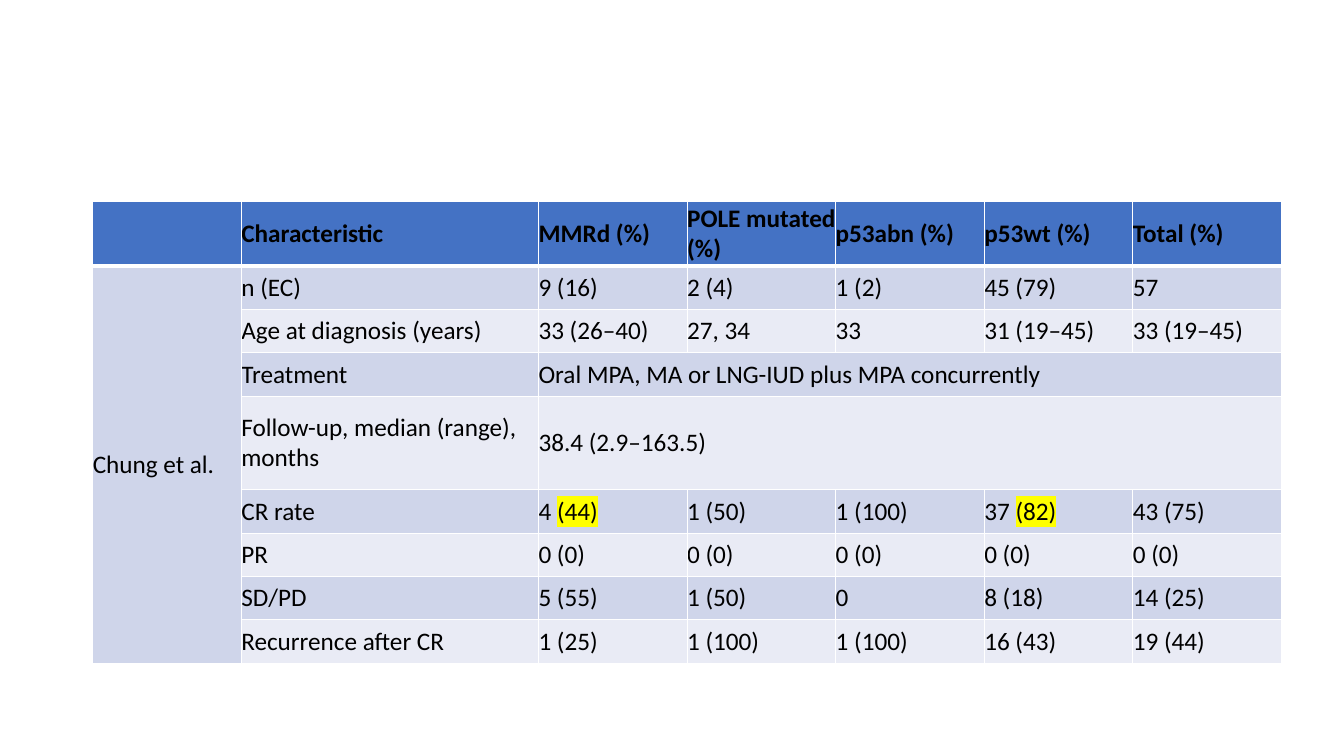
from dataclasses import dataclass

import pptx
import pptx.dml.color
import pptx.enum.text
import pptx.oxml
import pptx.oxml.ns
import pptx.util
from lxml import etree

SLIDE_W, SLIDE_H = 13.33, 7.5
LEFT, TOP = 0.92, 2
UNIT = 1.474
COLUMN_UNITS = [1, 2, 1, 1, 1, 1, 1]
ROW_H, HEADER_H, FOLLOW_UP_H = 0.43, 0.64, 0.93
COLORS = {
    "header": "4472C4",
    "band_dark": "CFD5EA",
    "band_light": "E9EBF5",
    "border": "FFFFFF",
    "text": "000000",
    "highlight": "FFFF00",
}
TEXT_FORMAT = {"name": "Calibri", "size": pptx.util.Pt(18)}
CELL_FORMAT = {
    "margin_left": 0,
    "margin_right": 0,
    "margin_top": 0,
    "margin_bottom": 0,
    "vertical_anchor": pptx.enum.text.MSO_ANCHOR.MIDDLE,
}


@dataclass
class Value:
    text: str
    marked: str = ""


@dataclass
class Row:
    label: str
    values: list[str | Value]
    height: float = ROW_H


HEADER = Row(
    "Characteristic",
    ["MMRd (%)", "POLE mutated (%)", "p53abn (%)", "p53wt (%)", "Total (%)"],
    HEADER_H,
)
STUDY = "Chung et al."
ROWS = [
    Row("n (EC)", ["9 (16)", "2 (4)", "1 (2)", "45 (79)", "57"]),
    Row("Age at diagnosis (years)",
        ["33 (26–40)", "27, 34", "33", "31 (19–45)", "33 (19–45)"]),
    Row("Treatment", ["Oral MPA, MA or LNG-IUD plus MPA concurrently"]),
    Row("Follow-up, median (range), months", ["38.4 (2.9–163.5)"], FOLLOW_UP_H),
    Row("CR rate",
        [Value("4 ", "(44)"), "1 (50)", "1 (100)", Value("37 ", "(82)"), "43 (75)"]),
    Row("PR", ["0 (0)"] * 5),
    Row("SD/PD", ["5 (55)", "1 (50)", "0", "8 (18)", "14 (25)"]),
    Row("Recurrence after CR",
        ["1 (25)", "1 (100)", "1 (100)", "16 (43)", "19 (44)"]),
]


def rgb(name: str) -> pptx.dml.color.RGBColor:
    return pptx.dml.color.RGBColor.from_string(COLORS[name])


def set_format(obj: object, values: dict) -> None:
    for name, value in values.items():
        setattr(obj, name, value)


def add_color(parent: etree._Element, name: str) -> None:
    etree.SubElement(parent, pptx.oxml.ns.qn("a:srgbClr"), val=COLORS[name])


def add_run(p: object, text: str, bold: bool, marked: bool = False) -> None:
    r = p.add_run()
    r.text = text
    set_format(r.font, TEXT_FORMAT | {"bold": bold})
    r.font.color.rgb = rgb("text")
    if marked:
        highlight = etree.Element(pptx.oxml.ns.qn("a:highlight"))
        add_color(highlight, "highlight")
        r.font._element.find(pptx.oxml.ns.qn("a:solidFill")).addnext(highlight)


def set_borders(cell: object, top: float, bottom: float) -> None:
    """Draw the cell's borders, with their widths in points."""
    tc_pr = cell._tc.get_or_add_tcPr()
    widths = {"L": 1, "R": 1, "T": top, "B": bottom}
    for i, (side, width) in enumerate(widths.items()):
        ln = etree.Element(pptx.oxml.ns.qn(f"a:ln{side}"), w=str(pptx.util.Pt(width)))
        add_color(etree.SubElement(ln, pptx.oxml.ns.qn("a:solidFill")), "border")
        tc_pr.insert(i, ln)


def fill_cell(cell: object, content: str | Value, row: int) -> None:
    header = row == 0
    set_format(cell, CELL_FORMAT)
    cell.fill.solid()
    band = "band_dark" if row % 2 else "band_light"
    cell.fill.fore_color.rgb = rgb("header" if header else band)
    set_borders(cell, top=3 if row == 1 else 1, bottom=3 if header else 1)
    value = content if isinstance(content, Value) else Value(content)
    p = cell.text_frame.paragraphs[0]
    if value.text:
        add_run(p, value.text, bold=header)
    if value.marked:
        add_run(p, value.marked, bold=header, marked=True)


def add_results_table(slide: object) -> None:
    rows = [HEADER, *ROWS]
    last_row, last_col = len(rows) - 1, len(COLUMN_UNITS) - 1
    size = [UNIT * sum(COLUMN_UNITS), sum(row.height for row in rows)]
    box = [pptx.util.Inches(x) for x in (LEFT, TOP, *size)]
    table = slide.shapes.add_table(len(rows), len(COLUMN_UNITS), *box).table
    for column, units in zip(table.columns, COLUMN_UNITS):
        column.width = pptx.util.Inches(UNIT * units)
    for i, row in enumerate(rows):
        table.rows[i].height = pptx.util.Inches(row.height)
        contents = [STUDY if i == 1 else "", row.label, *row.values]
        contents += [""] * (len(COLUMN_UNITS) - len(contents))
        for j, content in enumerate(contents):
            fill_cell(table.cell(i, j), content, i)
        if len(row.values) == 1:
            table.cell(i, 2).merge(table.cell(i, last_col))
    table.cell(1, 0).merge(table.cell(last_row, 0))


def main() -> None:
    prs = pptx.Presentation()
    prs.slide_width = pptx.util.Inches(SLIDE_W)
    prs.slide_height = pptx.util.Inches(SLIDE_H)
    add_results_table(prs.slides.add_slide(prs.slide_layouts[6]))
    prs.save("out.pptx")


if __name__ == "__main__":
    main()
